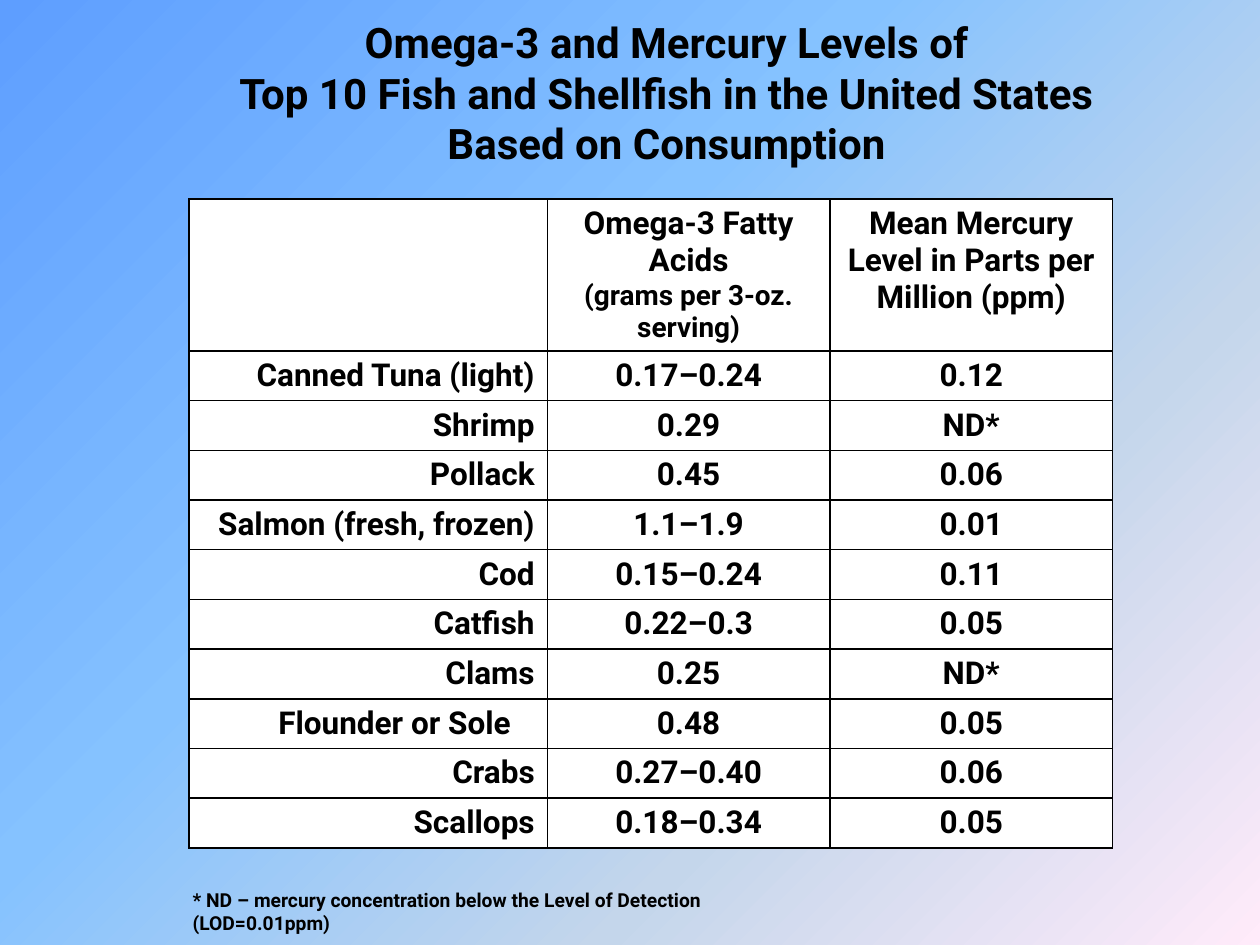
from copy import deepcopy
from itertools import product

from pptx import Presentation
from pptx.dml.color import RGBColor as RGB
from pptx.enum.text import MSO_ANCHOR as Anchor, PP_ALIGN as Align
from pptx.oxml import parse_xml
from pptx.oxml.ns import nsdecls, qn
from pptx.util import Inches, Pt

BLACK = RGB(0, 0, 0)
WHITE = RGB(255, 255, 255)
FADE = [
    (0, RGB(0x5E, 0x9E, 0xFF)),
    (0.4, RGB(0x85, 0xC2, 0xFF)),
    (0.7, RGB(0xC4, 0xD6, 0xEB)),
    (1, RGB(0xFF, 0xEB, 0xFA)),
]
FONT = "Roboto"
TITLE = [
    "Omega-3 and Mercury Levels of",
    "Top 10 Fish and Shellfish in the United States",
    "Based on Consumption",
]
HEAD = (
    "",
    "Omega-3 Fatty Acids\n(grams per 3-oz. serving)",
    "Mean Mercury Level in Parts per Million (ppm)",
)
FISH = [
    ("Canned Tuna (light)", "0.17–0.24", "0.12"),
    ("Shrimp", "0.29", "ND*"),
    ("Pollack", "0.45", "0.06"),
    ("Salmon (fresh, frozen)", "1.1–1.9", "0.01"),
    ("Cod", "0.15–0.24", "0.11"),
    ("Catfish", "0.22–0.3", "0.05"),
    ("Clams", "0.25", "ND*"),
    ("Flounder or Sole", "0.48", "0.05"),
    ("Crabs", "0.27–0.40", "0.06"),
    ("Scallops", "0.18–0.34", "0.05"),
]
NOTE = "* ND – mercury concentration below the Level of Detection (LOD=0.01ppm)"


def style(frame, size, align):
    """Format every run of a text frame."""
    for para in frame.paragraphs:
        para.alignment = align
        for run in para.runs:
            run.font.name = FONT
            run.font.size = Pt(size)
            run.font.bold = True
            run.font.color.rgb = BLACK


def paint(slide):
    """Fill the background with the diagonal fade."""
    fill = slide.background.fill
    fill.gradient()
    fill.gradient_angle = 315
    stops = slide.element.find(".//" + qn("a:gsLst"))
    for _ in FADE[2:]:
        stops.append(deepcopy(stops[0]))
    for stop, (place, color) in zip(fill.gradient_stops, FADE):
        stop.position = place
        stop.color.rgb = color


def add_title(slide, left, top, width, height):
    """Place the centred heading in the title placeholder."""
    title = slide.shapes.title
    title.left, title.top, title.width, title.height = left, top, width, height
    frame = title.text_frame
    frame.text = "\n".join(TITLE)
    frame.vertical_anchor = Anchor.MIDDLE
    style(frame, 24, Align.CENTER)


def add_edges(cell):
    """Draw a thin black line on all four sides of a cell."""
    props = cell._tc.get_or_add_tcPr()
    for i, side in enumerate("LRTB"):
        props.insert(i, parse_xml(
            f'<a:ln{side} {nsdecls("a")} w="{Pt(1)}"><a:solidFill>'
            f'<a:srgbClr val="{BLACK}"/></a:solidFill></a:ln{side}>'))


def add_grid(slide, left, top, width, height):
    """Place the table of fish with its tall head row."""
    rows = [HEAD] + FISH
    table = slide.shapes.add_table(
        len(rows), len(HEAD), left, top, width, height).table
    table.first_row = table.horz_banding = False
    for col, share in zip(table.columns, (0.388, 0.306, 0.306)):
        col.width = int(width * share)
    tall = int(height * 0.234)
    for row in table.rows:
        row.height = (height - tall) // len(FISH)
    table.rows[0].height = tall
    for r, c in product(range(len(rows)), range(len(HEAD))):
        cell = table.cell(r, c)
        cell.text_frame.paragraphs[0].text = rows[r][c]
        style(cell.text_frame, 18, Align.CENTER if c else Align.RIGHT)
        cell.fill.solid()
        cell.fill.fore_color.rgb = WHITE
        add_edges(cell)
    table.cell(0, 1).text_frame.paragraphs[0].runs[1].font.size = Pt(16)
    table.cell(8, 0).margin_right = Inches(0.29)


def add_note(slide, left, top, width, height):
    """Place the footnote under the table."""
    frame = slide.shapes.add_textbox(left, top, width, height).text_frame
    frame.word_wrap = True
    frame.text = NOTE
    style(frame, 11, Align.LEFT)


def main():
    """Build and save the slide."""
    deck = Presentation()
    deck.slide_width, deck.slide_height = Inches(10), Inches(7.5)
    slide = deck.slides.add_slide(deck.slide_layouts[5])
    paint(slide)
    add_title(slide, Inches(1), Inches(0.08), Inches(8.58), Inches(1.31))
    add_grid(slide, Inches(1.5), Inches(1.58), Inches(7.33), Inches(5.15))
    add_note(slide, Inches(1.43), Inches(7), Inches(5.24), Inches(0.29))
    deck.save("out.pptx")


if __name__ == "__main__":
    main()
